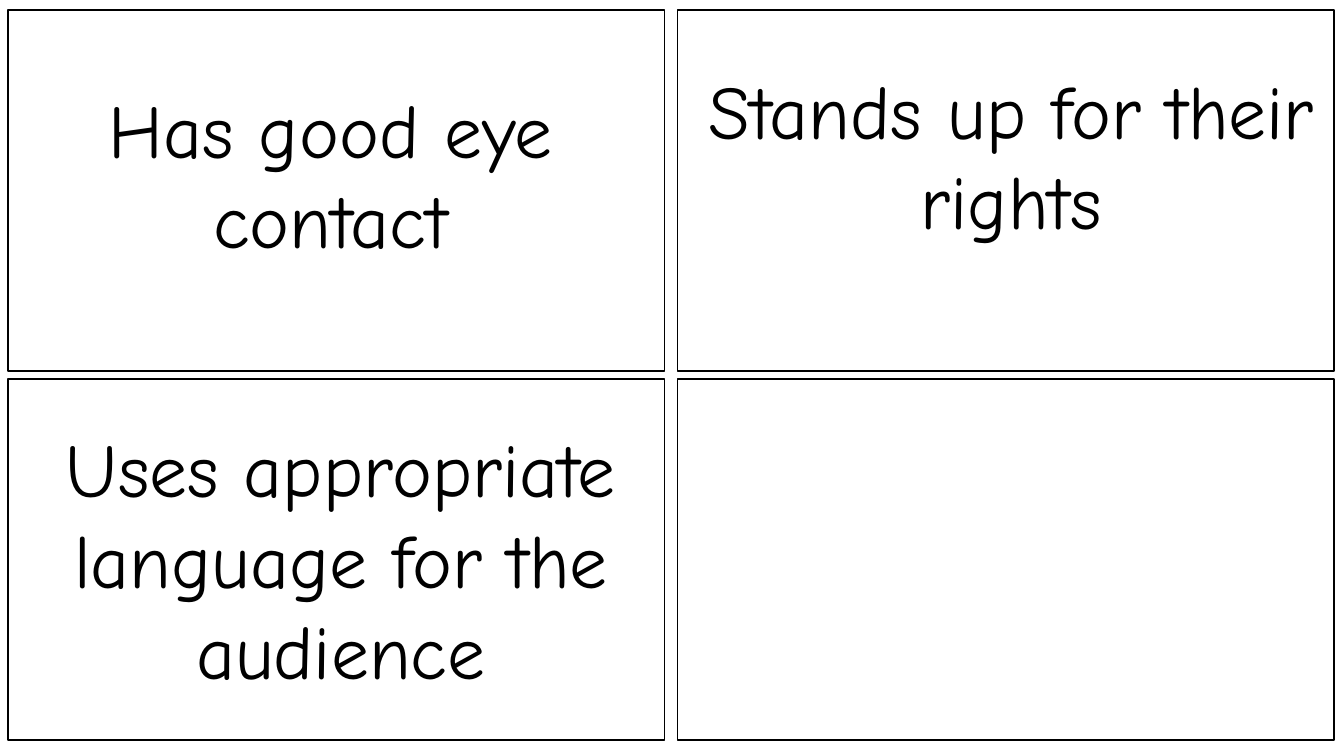
import pptx
import pptx.dml.color
import pptx.enum.shapes
import pptx.enum.text
import pptx.util

Inches = pptx.util.Inches
BLACK = pptx.dml.color.RGBColor(0, 0, 0)
WHITE = pptx.dml.color.RGBColor(255, 255, 255)

CARD_WIDTH, CARD_HEIGHT = 6.51, 3.58
CARD_LEFTS = (0.08, 6.72)
CARD_TOPS = (0.1, 3.76)

CAPTIONS = (
    ("Has good eye contact", 0.08, 0.77, 6.4, 1.92),
    ("Stands up for their rights", 6.83, 0.58, 6.4, 1.92),
    ("Uses appropriate language for the audience", -0.07, 4.14, 6.9, 2.83),
)


class CardSlide:
    font_name = "Comic Neue"
    font_size = pptx.util.Pt(54)
    line_width = pptx.util.Pt(1)

    def __init__(self, slide):
        self.slide = slide

    def add_card(self, left, top):
        card = self.slide.shapes.add_shape(
            pptx.enum.shapes.MSO_SHAPE.RECTANGLE,
            Inches(left), Inches(top), Inches(CARD_WIDTH), Inches(CARD_HEIGHT),
        )
        card.shadow.inherit = False
        card.fill.solid()
        card.fill.fore_color.rgb = WHITE
        card.line.color.rgb = BLACK
        card.line.width = self.line_width

    def add_caption(self, text, left, top, width, height):
        caption = self.slide.shapes.add_textbox(
            Inches(left), Inches(top), Inches(width), Inches(height)
        )
        text_frame = caption.text_frame
        text_frame.word_wrap = True
        text_frame.auto_size = pptx.enum.text.MSO_AUTO_SIZE.SHAPE_TO_FIT_TEXT
        text_frame.text = text
        paragraph = text_frame.paragraphs[0]
        paragraph.alignment = pptx.enum.text.PP_ALIGN.CENTER
        font = paragraph.runs[0].font
        font.name = self.font_name
        font.size = self.font_size
        font.color.rgb = BLACK


def main():
    presentation = pptx.Presentation()
    presentation.slide_width = Inches(13.33)
    presentation.slide_height = Inches(7.5)
    blank_layout = presentation.slide_layouts[6]
    card_slide = CardSlide(presentation.slides.add_slide(blank_layout))

    for left in CARD_LEFTS:
        for top in CARD_TOPS:
            card_slide.add_card(left, top)
    for caption in CAPTIONS:
        card_slide.add_caption(*caption)

    presentation.save("out.pptx")


if __name__ == "__main__":
    main()
